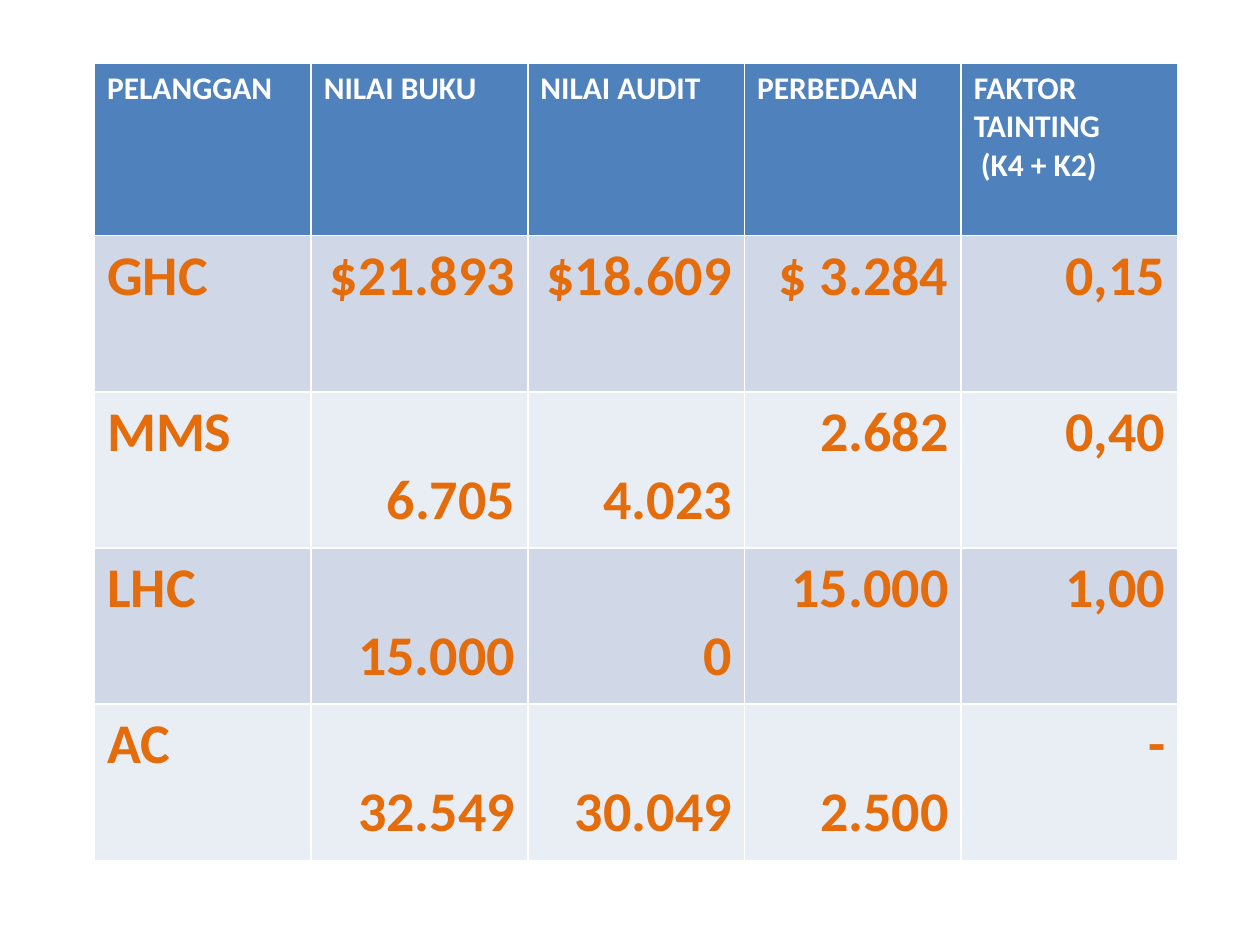
import pptx
import pptx.dml.color
import pptx.enum.text
import pptx.util
from typing import NamedTuple

WIDTH, HEIGHT = 10, 7.5
COLUMNS = 5
COLUMN_WIDTH = 1.72
HEADER_HEIGHT, ROW_HEIGHT = 1.37, 1.24
TOP_MARGIN = 0.05
LINE_HEIGHT = 0.54
FONT = "Calibri"
WHITE, ORANGE, BLUE = "FFFFFF", "E46C0A", "4F81BD"
BANDS = ("D0D8E8", "E9EDF4")
HEADERS = (
    "PELANGGAN",
    "NILAI BUKU",
    "NILAI AUDIT",
    "PERBEDAAN",
    "FAKTOR TAINTING\n (K4 + K2)",
)


class Customer(NamedTuple):
    name: str
    values: tuple[str, ...]
    lowered: tuple[int, ...] = ()


CUSTOMERS = (
    Customer("GHC", ("$21.893", "$18.609", "$ 3.284", "0,15")),
    Customer("MMS", ("6.705", "4.023", "2.682", "0,40"), (1, 2)),
    Customer("LHC", ("15.000", "0", "15.000", "1,00"), (1, 2)),
    Customer("AC", ("32.549", "30.049", "2.500", "-"), (1, 2, 3)),
)


def color(value: str) -> pptx.dml.color.RGBColor:
    return pptx.dml.color.RGBColor.from_string(value)


def fill_cell(cell, text: str, size: int, ink: str, fill: str,
              right: bool = False, lowered: bool = False) -> None:
    cell.fill.solid()
    cell.fill.fore_color.rgb = color(fill)
    cell.margin_top = pptx.util.Inches(TOP_MARGIN + LINE_HEIGHT * lowered)
    tf = cell.text_frame
    for i, line in enumerate(text.split("\n")):
        p = tf.add_paragraph() if i else tf.paragraphs[0]
        align = pptx.enum.text.PP_ALIGN
        p.alignment = align.RIGHT if right else align.LEFT
        r = p.add_run()
        r.text = line
        r.font.name = FONT
        r.font.size = pptx.util.Pt(size)
        r.font.bold = True
        r.font.color.rgb = color(ink)


def add_customer_table(s) -> None:
    heights = [HEADER_HEIGHT] + [ROW_HEIGHT] * len(CUSTOMERS)
    table = s.shapes.add_table(
        len(heights), COLUMNS,
        pptx.util.Inches(0.075 * WIDTH), pptx.util.Inches(HEIGHT / 15),
        pptx.util.Inches(COLUMNS * COLUMN_WIDTH),
        pptx.util.Inches(sum(heights)),
    ).table
    for column in table.columns:
        column.width = pptx.util.Inches(COLUMN_WIDTH)
    for row, height in zip(table.rows, heights):
        row.height = pptx.util.Inches(height)
    for col, text in enumerate(HEADERS):
        fill_cell(table.cell(0, col), text, 18, WHITE, BLUE)
    for row, customer in enumerate(CUSTOMERS, start=1):
        band = BANDS[(row - 1) % len(BANDS)]
        for col, text in enumerate((customer.name, *customer.values)):
            fill_cell(table.cell(row, col), text, 32, ORANGE, band,
                      right=col > 0, lowered=col in customer.lowered)


def main() -> None:
    prs = pptx.Presentation()
    prs.slide_width = pptx.util.Inches(WIDTH)
    prs.slide_height = pptx.util.Inches(HEIGHT)
    s = prs.slides.add_slide(prs.slide_layouts[6])
    add_customer_table(s)
    prs.save("out.pptx")


if __name__ == "__main__":
    main()
